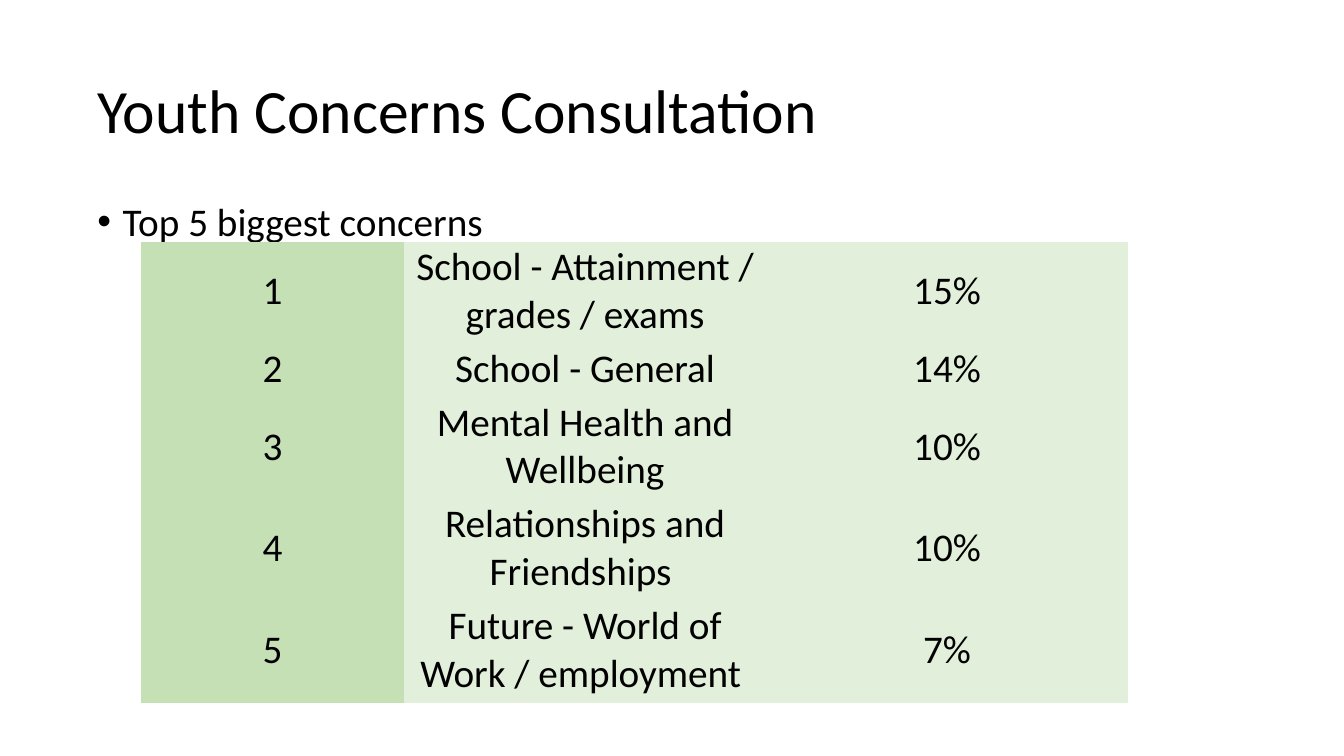
from dataclasses import dataclass

from lxml import etree
from pptx import Presentation
from pptx.dml.color import RGBColor
from pptx.enum.text import MSO_ANCHOR, MSO_AUTO_SIZE, PP_ALIGN
from pptx.oxml.ns import qn
from pptx.util import Emu, Inches, Pt

LEFT, CENTER = PP_ALIGN.LEFT, PP_ALIGN.CENTER
TOP, MIDDLE = MSO_ANCHOR.TOP, MSO_ANCHOR.MIDDLE
NO_AUTOFIT = MSO_AUTO_SIZE.NONE

GRID_COLUMNS, GRID_ROWS = 160, 90
GRID_UNIT = Inches(1) // 12
PLAIN_TABLE_STYLE = "{2D5ABB26-0587-4C30-8999-92F81FD0307C}"


@dataclass(frozen=True)
class Theme:
    font: str = "Calibri"
    title_size: int = 44
    body_size: int = 28
    text: str = "000000"
    background: str = "FFFFFF"
    rank_fill: str = "C5E0B4"
    detail_fill: str = "E2EFDA"


@dataclass(frozen=True)
class Area:
    """A rectangle in grid columns and rows."""
    left: float
    top: float
    width: float
    height: float


@dataclass(frozen=True)
class Concern:
    name: str
    share: str
    lines: int = 2


THEME = Theme()
TITLE_AREA = Area(11, 4.8, 138, 17.4)
BODY_AREA = Area(11, 24, 138, 6)
TABLE_LEFT, TABLE_TOP = 16.8, 28.8
COLUMN_WIDTHS = (31.3, 43.1, 43.1)
ROW_HEIGHTS = {1: 6.4, 2: 12.12}
CONCERNS = (
    Concern("School - Attainment / grades / exams", "15%"),
    Concern("School - General", "14%", lines=1),
    Concern("Mental Health and Wellbeing", "10%"),
    Concern("Relationships and Friendships ", "10%"),
    Concern("Future - World of Work / employment ", "7%"),
)


def grid(units: float) -> Emu:
    return Emu(round(units * GRID_UNIT))


def write_text(text_frame, text: str, *, size: int, align=LEFT,
               line_spacing: float = 1.0, bullet: bool = False) -> None:
    paragraph = text_frame.paragraphs[0]
    paragraph.text = text
    paragraph.alignment = align
    paragraph.line_spacing = line_spacing
    paragraph.space_before = Pt(0)
    if bullet:
        properties = paragraph._p.get_or_add_pPr()
        properties.set("marL", str(Inches(0.25)))
        properties.set("indent", str(-Inches(0.25)))
        etree.SubElement(properties, qn("a:buFont"), typeface="Arial")
        etree.SubElement(properties, qn("a:buChar"), char="•")
    font = paragraph.runs[0].font
    font.name = THEME.font
    font.size = Pt(size)
    font.color.rgb = RGBColor.from_string(THEME.text)


def fill_placeholder(shape, area: Area, text: str, *, anchor=TOP, **text_format) -> None:
    shape.left, shape.top = grid(area.left), grid(area.top)
    shape.width, shape.height = grid(area.width), grid(area.height)
    text_frame = shape.text_frame
    text_frame.word_wrap = True
    text_frame.auto_size = NO_AUTOFIT
    text_frame.vertical_anchor = anchor
    text_frame.margin_left = text_frame.margin_right = Inches(0.05)
    text_frame.margin_top = text_frame.margin_bottom = Inches(0.05)
    write_text(text_frame, text, **text_format)


def fill_cell(cell, text: str, color: str) -> None:
    cell.fill.solid()
    cell.fill.fore_color.rgb = RGBColor.from_string(color)
    cell.vertical_anchor = MIDDLE
    cell.margin_left = cell.margin_right = cell.margin_top = Inches(0.01)
    cell.margin_bottom = Inches(0.05)
    write_text(cell.text_frame, text, size=THEME.body_size, align=CENTER)


def add_concerns_table(slide) -> None:
    heights = [ROW_HEIGHTS[concern.lines] for concern in CONCERNS]
    table = slide.shapes.add_table(
        len(CONCERNS), len(COLUMN_WIDTHS), grid(TABLE_LEFT), grid(TABLE_TOP),
        grid(sum(COLUMN_WIDTHS)), grid(sum(heights))).table
    table.first_row = table.horz_banding = False
    table._tbl.tblPr.find(qn("a:tableStyleId")).text = PLAIN_TABLE_STYLE
    for column, width in zip(table.columns, COLUMN_WIDTHS):
        column.width = grid(width)
    for row, height in zip(table.rows, heights):
        row.height = grid(height)
    for index, concern in enumerate(CONCERNS):
        rank, name, share = table.rows[index].cells
        fill_cell(rank, str(index + 1), THEME.rank_fill)
        fill_cell(name, concern.name, THEME.detail_fill)
        fill_cell(share, concern.share, THEME.detail_fill)


def main() -> None:
    presentation = Presentation()
    presentation.slide_width = grid(GRID_COLUMNS)
    presentation.slide_height = grid(GRID_ROWS)
    slide = presentation.slides.add_slide(presentation.slide_layouts[1])
    slide.background.fill.solid()
    slide.background.fill.fore_color.rgb = RGBColor.from_string(THEME.background)
    fill_placeholder(slide.shapes.title, TITLE_AREA, "Youth Concerns Consultation",
                     anchor=MIDDLE, size=THEME.title_size, line_spacing=0.9)
    fill_placeholder(slide.placeholders[1], BODY_AREA, "Top 5 biggest concerns",
                     size=THEME.body_size, line_spacing=0.8, bullet=True)
    add_concerns_table(slide)
    presentation.save("out.pptx")


if __name__ == "__main__":
    main()
